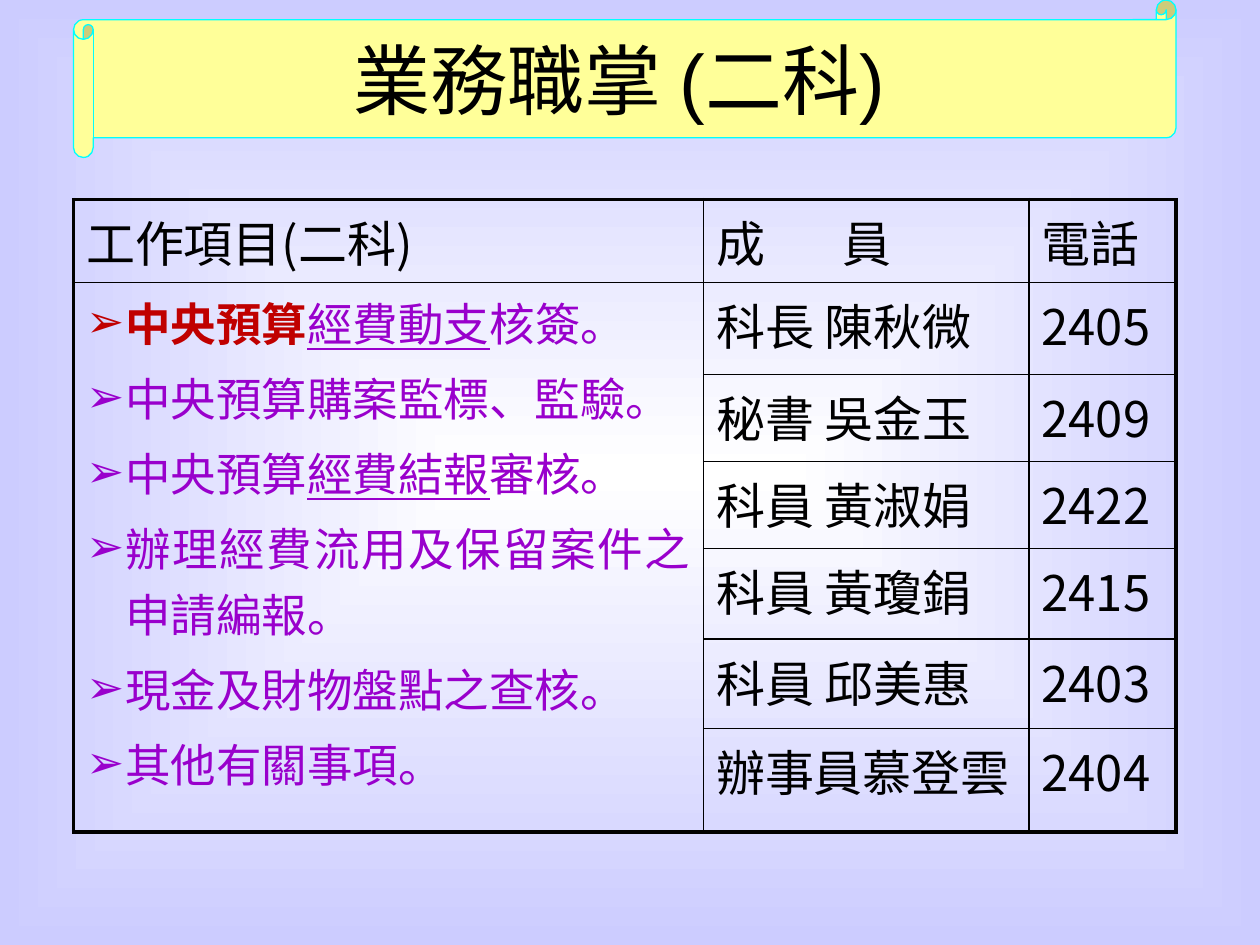
from pptx import Presentation
from pptx.dml.color import RGBColor
from pptx.enum.shapes import MSO_SHAPE as Shape
from pptx.enum.text import MSO_ANCHOR as Anchor, PP_ALIGN as Align
from pptx.oxml.ns import qn
from pptx.util import Inches, Pt
from lxml.etree import SubElement

UNIT = Inches(1) / 12
SANS, SERIF = "Noto Sans CJK SC", "Times New Roman"
BLACK, RED, PURPLE = "000000", "C00000", "9900CC"
COLUMNS = [60, 31, 14]
ROWS = [7.92, 8.76, 8.28, 8.28, 8.64, 8.52, 9.84]
HEADER = ["工作項目(二科)", "成\t員", "電話"]
MEMBERS = [
    ("科長 陳秋微", "2405"),
    ("秘書 吳金玉", "2409"),
    ("科員 黃淑娟", "2422"),
    ("科員 黃瓊鋗", "2415"),
    ("科員 邱美惠", "2403"),
    ("辦事員慕登雲", "2404"),
]
DUTIES = [
    [("中央預算", "strong"), ("經費動支", "underline"), ("核簽。", "")],
    [("中央預算購案監標、監驗。", "")],
    [("中央預算", ""), ("經費結報", "underline"), ("審核。", "")],
    [("辦理經費流用及保留案件之申請編報。", "")],
    [("現金及財物盤點之查核。", "")],
    [("其他有關事項。", "")],
]


def color(value):
    return RGBColor.from_string(value)


def grid(*counts):
    return [round(count * UNIT) for count in counts]


def style(span, size, face, tint):
    span.font.size = Pt(size)
    span.font.name = face
    span.font.color.rgb = color(tint)
    SubElement(span.font._element, qn("a:ea"), typeface=SANS)


def paint_background(page):
    fill = page.background.fill
    fill.gradient()
    for stop, tint in zip(fill.gradient_stops, ["FFFFFF", "CCCCFF"]):
        stop.color.rgb = color(tint)
    gradient = page._element.find(".//" + qn("a:gradFill"))
    gradient.remove(gradient.find(qn("a:lin")))
    center = SubElement(gradient, qn("a:path"), {"path": "shape"})
    SubElement(center, qn("a:fillToRect"), dict.fromkeys("ltrb", "50000"))


def add_title(page, left, top, width, height):
    scroll = page.shapes.add_shape(Shape.HORIZONTAL_SCROLL, *grid(left, top, width, height))
    scroll.shadow.inherit = False
    scroll.adjustments[0] = 0.125
    scroll.fill.solid()
    scroll.fill.fore_color.rgb = color("FFFF99")
    scroll.line.color.rgb = color("00FFFF")
    scroll.line.width = Pt(0.75)

    box = page.shapes.add_textbox(*grid(left + 1, top, width - 3, height))
    frame = box.text_frame
    frame.word_wrap = True
    frame.vertical_anchor = Anchor.MIDDLE
    frame.text = "業務職掌 (二科)"
    para = frame.paragraphs[0]
    para.alignment = Align.CENTER
    style(para.runs[0], 44, "Arial", BLACK)


def add_borders(cell, outer_sides):
    properties = cell._tc.get_or_add_tcPr()
    for side in "LRTB":
        width = Pt(2.25 if side in outer_sides else 1)
        line = SubElement(properties, qn("a:ln" + side), w=str(width))
        fill = SubElement(line, qn("a:solidFill"))
        SubElement(fill, qn("a:srgbClr"), val=BLACK)
    cell.fill.background()


def write_cell(cell, text):
    cell.text_frame.text = text
    para = cell.text_frame.paragraphs[0]
    if "\t" in text:
        tabs = SubElement(para._p.get_or_add_pPr(), qn("a:tabLst"))
        SubElement(tabs, qn("a:tab"), pos=str(Inches(1)), algn="l")
    style(para.runs[0], 28, SANS, BLACK)


def write_duties(cell):
    frame = cell.text_frame
    for index, duty in enumerate(DUTIES):
        para = frame.add_paragraph() if index else frame.paragraphs[0]
        para.alignment = Align.JUSTIFY
        if index:
            para.space_before = Pt(5.2)
        properties = para._p.get_or_add_pPr()
        indent = Inches(0.31)
        properties.set("marL", str(indent))
        properties.set("indent", str(-indent))
        SubElement(properties, qn("a:buFont"), typeface="Arial")
        SubElement(properties, qn("a:buChar"), char="➢")
        for text, emphasis in duty:
            span = para.add_run()
            span.text = text
            span.font.bold = emphasis == "strong"
            span.font.underline = emphasis == "underline"
            style(span, 26, SERIF, RED if emphasis == "strong" else PURPLE)


def add_duty_table(page, left, top):
    last_row, last_column = len(ROWS) - 1, len(COLUMNS) - 1
    frame = page.shapes.add_table(
        len(ROWS), len(COLUMNS), *grid(left, top, sum(COLUMNS), sum(ROWS)))
    table = frame.table
    table.first_row = table.horz_banding = False
    for column, width in zip(table.columns, grid(*COLUMNS)):
        column.width = width
    for row, height in zip(table.rows, grid(*ROWS)):
        row.height = height

    table.cell(1, 0).merge(table.cell(last_row, 0))
    for row in range(len(ROWS)):
        for column in range(len(COLUMNS)):
            edges = {"L": column == 0, "R": column == last_column,
                     "T": row == 0, "B": row == last_row or (row, column) == (1, 0)}
            add_borders(table.cell(row, column), [side for side in edges if edges[side]])

    for column, text in enumerate(HEADER):
        write_cell(table.cell(0, column), text)
    write_duties(table.cell(1, 0))
    for row, member in enumerate(MEMBERS, 1):
        for column, text in enumerate(member, 1):
            write_cell(table.cell(row, column), text)


def main():
    deck = Presentation()
    deck.slide_width, deck.slide_height = grid(120, 90)
    page = deck.slides.add_slide(deck.slide_layouts[6])
    paint_background(page)
    add_title(page, 7, 0, 105, 15)
    add_duty_table(page, 7, 19)
    deck.save("out.pptx")


if __name__ == "__main__":
    main()
